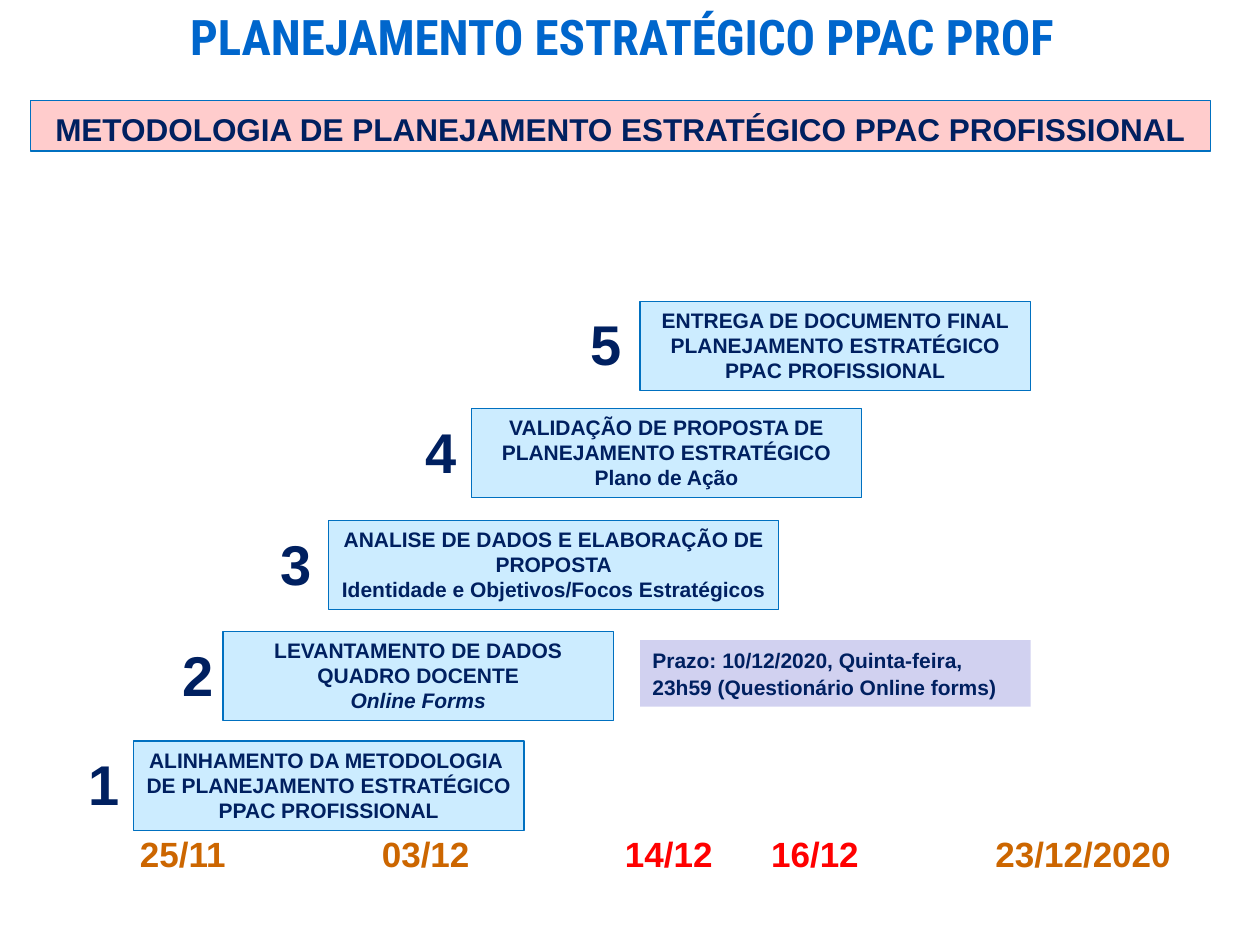
from dataclasses import dataclass

from lxml import etree
from pptx import Presentation
from pptx import util as u
from pptx.dml import color
from pptx.enum import shapes, text
from pptx.oxml import ns

NAVY = "002060"
BLUE = "0070C0"
ORANGE = "CC6600"
RED = "FF0000"
CENTER = text.PP_ALIGN.CENTER
SMALL_INSETS = (0.07, 0.03)


@dataclass
class Part:
    content: str
    color: str = NAVY
    italic: bool = False


@dataclass
class Step:
    number: str
    number_left: float
    left: float
    top: float
    lines: list[Part]
    width: float = 3.1


STEPS = [
    Step("1", 0.63, 1.06, 5.88, [
        Part("ALINHAMENTO DA METODOLOGIA "),
        Part("DE PLANEJAMENTO ESTRATÉGICO "),
        Part("PPAC PROFISSIONAL")]),
    Step("2", 1.38, 1.77, 5.01, [
        Part("LEVANTAMENTO DE DADOS QUADRO DOCENTE"),
        Part("Online Forms", italic=True)]),
    Step("3", 2.16, 2.61, 4.13, [
        Part("ANALISE DE DADOS E ELABORAÇÃO DE PROPOSTA"),
        Part("Identidade e Objetivos/Focos Estratégicos")], 3.57),
    Step("4", 3.31, 3.74, 3.24, [
        Part("VALIDAÇÃO DE PROPOSTA DE PLANEJAMENTO ESTRATÉGICO"),
        Part("Plano de Ação")]),
    Step("5", 4.62, 5.08, 2.39, [
        Part("ENTREGA DE DOCUMENTO FINAL PLANEJAMENTO ESTRATÉGICO"),
        Part("PPAC PROFISSIONAL")]),
]
DATES = [
    Part("25/11\t03/12\t", ORANGE),
    Part("14/12\t16/12\t", RED),
    Part("23/12/2020", ORANGE),
]
DATE_STOPS = [1.92, 3.85, 5.01, 6.79]


def rgb(value: str) -> color.RGBColor:
    return color.RGBColor.from_string(value)


def write_text(shape, paragraphs: list[list[Part]], *, size: float, font: str = "Arial",
               align=None, wrap: bool = True, insets: tuple = (0.1, 0.05),
               grow: bool = False, line_spacing: float | None = None,
               space_after: float | None = None) -> None:
    frame = shape.text_frame
    frame.word_wrap = wrap
    frame.vertical_anchor = text.MSO_ANCHOR.TOP
    frame.margin_left = frame.margin_right = u.Inches(insets[0])
    frame.margin_top = frame.margin_bottom = u.Inches(insets[1])
    if grow:
        frame.auto_size = text.MSO_AUTO_SIZE.SHAPE_TO_FIT_TEXT
    for index, parts in enumerate(paragraphs):
        paragraph = frame.add_paragraph() if index else frame.paragraphs[0]
        paragraph.alignment = align or text.PP_ALIGN.LEFT
        if line_spacing:
            paragraph.line_spacing = line_spacing
        if space_after:
            paragraph.space_after = u.Pt(space_after)
        for part in parts:
            run = paragraph.add_run()
            run.text = part.content
            run.font.name = font
            run.font.size = u.Pt(size)
            run.font.bold = True
            run.font.italic = part.italic
            run.font.color.rgb = rgb(part.color)


def add_box(slide, left: float, top: float, width: float, height: float,
            fill: str, line: str | None = BLUE):
    shape = slide.shapes.add_shape(
        shapes.MSO_SHAPE.RECTANGLE,
        u.Inches(left), u.Inches(top), u.Inches(width), u.Inches(height))
    shape.shadow.inherit = False
    shape.fill.solid()
    shape.fill.fore_color.rgb = rgb(fill)
    if line:
        shape.line.color.rgb = rgb(line)
        shape.line.width = u.Pt(0.75)
    else:
        shape.line.fill.background()
    return shape


def add_label(slide, left: float, top: float, width: float, height: float):
    return slide.shapes.add_textbox(
        u.Inches(left), u.Inches(top), u.Inches(width), u.Inches(height))


def add_tab_stops(paragraph, stops: list[float]) -> None:
    tabs = etree.SubElement(paragraph._p.get_or_add_pPr(), ns.qn("a:tabLst"))
    for stop in stops:
        etree.SubElement(tabs, ns.qn("a:tab"), pos=str(u.Inches(stop)), algn="l")


def add_step(slide, step: Step) -> None:
    box = add_box(slide, step.left, step.top, step.width, 0.71, "CCECFF")
    write_text(box, [[line] for line in step.lines], size=12, align=CENTER, grow=True)
    number = add_label(slide, step.number_left, step.top + 0.04, 0.62, 0.75)
    write_text(number, [[Part(step.number)]], size=32, insets=SMALL_INSETS)


def main() -> None:
    presentation = Presentation()
    presentation.slide_width = u.Inches(10)
    presentation.slide_height = u.Inches(7.5)
    slide = presentation.slides.add_slide(presentation.slide_layouts[6])

    title = add_label(slide, 1.46, 0, 6.95, 0.47)
    write_text(title, [[Part("PLANEJAMENTO ESTRATÉGICO PPAC PROF", "0066CC")]],
               size=28, font="Roboto Condensed", align=CENTER, wrap=False,
               insets=(0, 0.05))

    banner = add_box(slide, 0.24, 0.8, 9.37, 0.4, "FFCCCC")
    write_text(banner, [[Part("METODOLOGIA DE PLANEJAMENTO ESTRATÉGICO PPAC PROFISSIONAL")]],
               size=18, align=CENTER, grow=True, line_spacing=1.07, space_after=8)

    for step in STEPS:
        add_step(slide, step)

    dates = add_label(slide, 1.04, 6.58, 8.45, 0.75)
    write_text(dates, [DATES], size=20, insets=SMALL_INSETS)
    add_tab_stops(dates.text_frame.paragraphs[0], DATE_STOPS)

    deadline = add_box(slide, 5.08, 5.08, 3.1, 0.53, "D1D1F0", line=None)
    write_text(deadline,
               [[Part("Prazo: 10/12/2020, Quinta-feira, 23h59 (Questionário Online forms)")]],
               size=12, grow=True, line_spacing=1.07)

    presentation.save("out.pptx")


if __name__ == "__main__":
    main()
